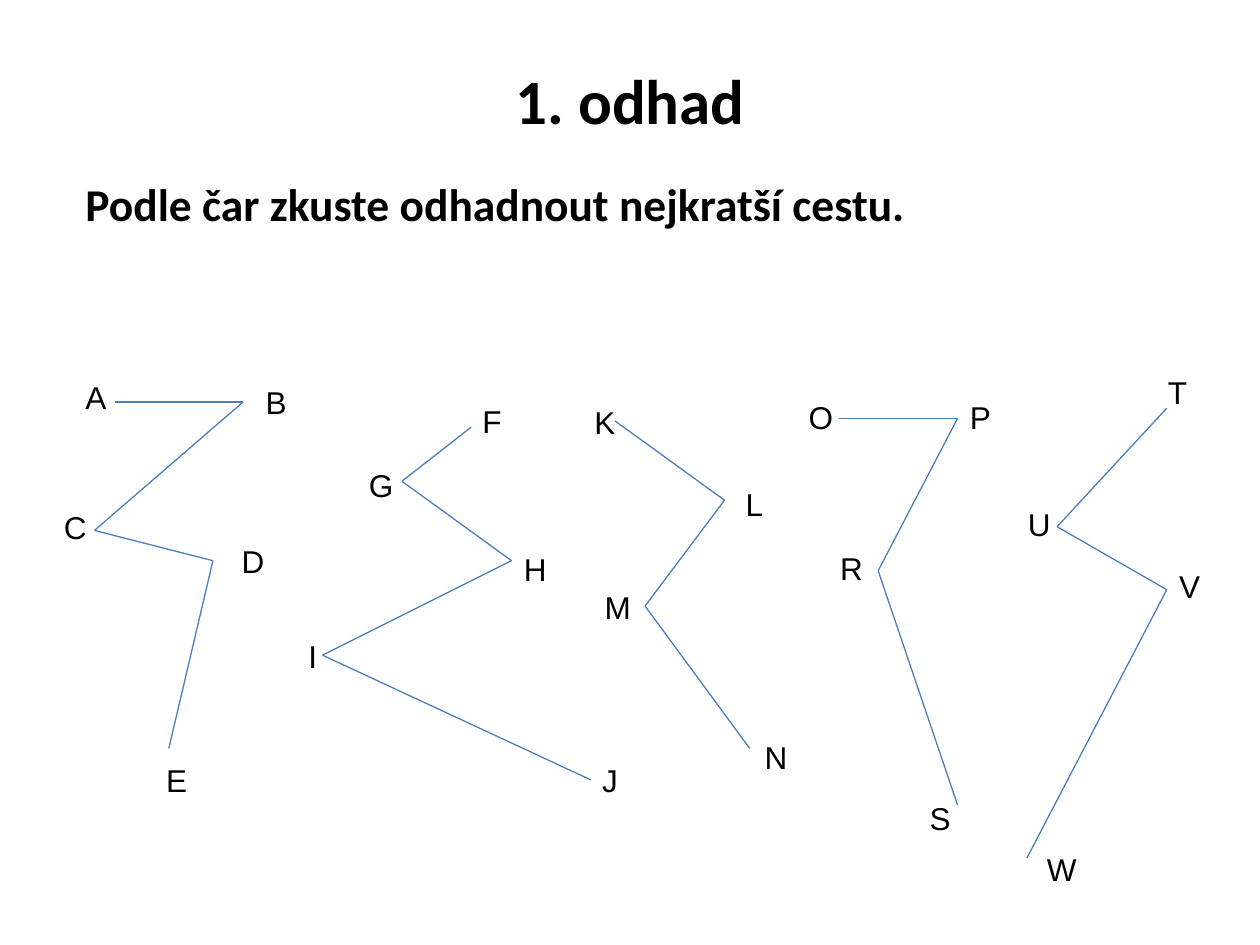
from dataclasses import dataclass
from itertools import pairwise

from lxml import etree
from pptx import Presentation, util as u
from pptx.dml.color import RGBColor
from pptx.enum import shapes, text
from pptx.oxml import ns


@dataclass(frozen=True)
class Theme:
    """Colours, fonts and type sizes of the slide."""
    ink: RGBColor = RGBColor(0x00, 0x00, 0x00)
    route: RGBColor = RGBColor(0x4B, 0x7E, 0xBC)
    heading_font: str = "Calibri"
    label_font: str = "Arial"
    title_size: float = 36
    task_size: float = 26
    label_size: float = 18
    route_width: float = 0.75


THEME = Theme()
LABEL_HEIGHT = 0.4
HANGING = 0.38

# Each stop: letter, point x and y, label left, top and width
ROUTES = (
    (("A", 0.91, 3.19, 0.58, 2.95, 0.35), ("B", 1.93, 3.19, 2.01, 2.99, 0.34),
     ("C", 0.75, 4.21, 0.41, 3.98, 0.34), ("D", 1.69, 4.45, 1.82, 4.25, 0.36),
     ("E", 1.34, 5.94, 1.22, 5.99, 0.32)),
    (("F", 3.74, 3.39, 3.73, 3.14, 0.32), ("G", 3.19, 3.82, 2.83, 3.65, 0.36),
     ("H", 4.06, 4.45, 4.06, 4.32, 0.36), ("I", 2.56, 5.20, 2.35, 5.01, 0.26),
     ("J", 4.69, 6.19, 4.68, 5.99, 0.28)),
    (("K", 4.88, 3.34, 4.62, 3.15, 0.33), ("L", 5.75, 3.97, 5.82, 3.80, 0.31),
     ("M", 5.12, 4.81, 4.70, 4.62, 0.42), ("N", 5.95, 5.94, 5.97, 5.81, 0.36)),
    (("O", 6.66, 3.32, 6.32, 3.11, 0.37), ("P", 7.60, 3.32, 7.60, 3.11, 0.33),
     ("R", 6.97, 4.53, 6.57, 4.31, 0.34), ("S", 7.60, 6.39, 7.28, 6.29, 0.32)),
    (("T", 9.26, 3.24, 9.17, 2.91, 0.32), ("U", 8.39, 4.18, 8.06, 3.96, 0.36),
     ("V", 9.26, 4.68, 9.26, 4.45, 0.35), ("W", 8.15, 6.81, 8.21, 6.70, 0.43)),
)


def apply(target, values):
    """Set every attribute named in values on target."""
    for name, value in values.items():
        setattr(target, name, value)


def add_text(parent, wording, box, font, frame):
    """Add one line of text and return its paragraph."""
    text_frame = parent.add_textbox(*map(u.Inches, box)).text_frame
    apply(text_frame, frame)
    paragraph = text_frame.paragraphs[0]
    run = paragraph.add_run()
    run.text = wording
    apply(run.font, font)
    run.font.color.rgb = THEME.ink
    return paragraph


def add_title(slide, wording):
    """Add the centred slide title."""
    font = {"name": THEME.heading_font, "size": u.Pt(THEME.title_size), "bold": True}
    frame = {"word_wrap": True, "vertical_anchor": text.MSO_ANCHOR.MIDDLE}
    title = add_text(slide.shapes, wording, (0.5, 0.3, 9, 0.97), font, frame)
    title.alignment = text.PP_ALIGN.CENTER


def add_task(slide, wording):
    """Add the task with its hanging indent."""
    font = {"name": THEME.heading_font, "size": u.Pt(THEME.task_size), "bold": True}
    frame = {"word_wrap": True, "vertical_anchor": text.MSO_ANCHOR.TOP}
    task = add_text(slide.shapes, wording, (0.58, 1.35, 9, 5.46), font, frame)
    task.space_before = u.Pt(0.2 * THEME.task_size)
    properties = task._p.get_or_add_pPr()
    properties.set("marL", str(u.Inches(HANGING)))
    properties.set("indent", str(u.Inches(-HANGING)))


def add_segment(parent, start, end):
    """Draw one straight part of a route."""
    segment = parent.add_connector(
        shapes.MSO_CONNECTOR.STRAIGHT, *map(u.Inches, (*start, *end)))
    segment.line.color.rgb = THEME.route
    segment.line.width = u.Pt(THEME.route_width)
    etree.SubElement(segment._element.spPr, ns.qn("a:effectLst"))


def add_route(slide, stops):
    """Draw a route as a group of segments and lettered stops."""
    route = slide.shapes.add_group_shape().shapes
    for start, end in pairwise(stops):
        add_segment(route, start[1:3], end[1:3])
    font = {"name": THEME.label_font, "size": u.Pt(THEME.label_size)}
    frame = {"word_wrap": False, "auto_size": text.MSO_AUTO_SIZE.SHAPE_TO_FIT_TEXT}
    for letter, _, _, left, top, width in stops:
        add_text(route, letter, (left, top, width, LABEL_HEIGHT), font, frame)


def main():
    """Build and save the slide."""
    deck = Presentation()
    apply(deck, {"slide_width": u.Inches(10), "slide_height": u.Inches(7.5)})
    slide = deck.slides.add_slide(deck.slide_layouts[6])
    add_title(slide, "1. odhad")
    add_task(slide, "Podle čar zkuste odhadnout nejkratší cestu.")
    for stops in ROUTES:
        add_route(slide, stops)
    deck.save("out.pptx")


if __name__ == "__main__":
    main()
